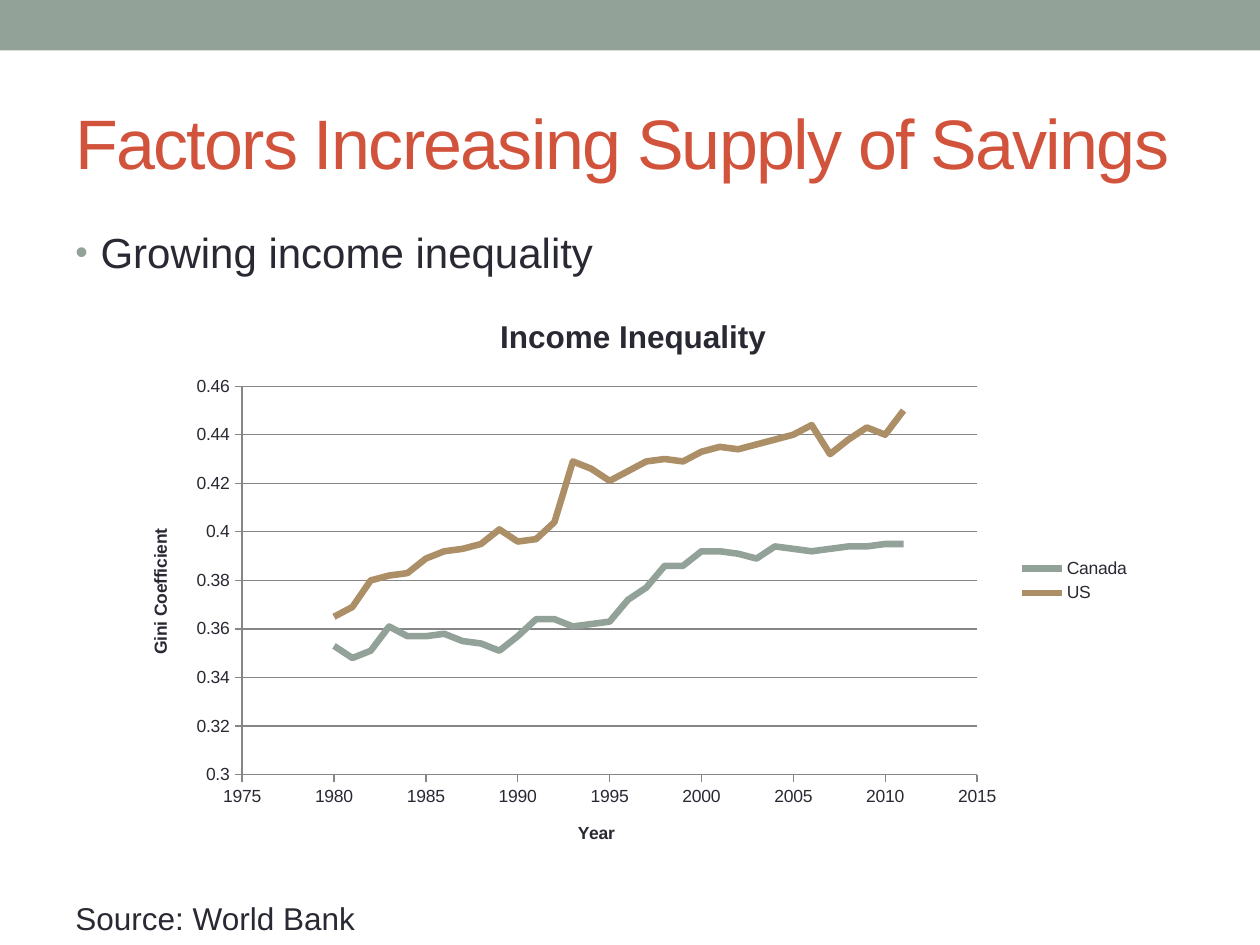
from lxml import etree
from pptx import Presentation
from pptx.chart import data as chart_data
from pptx.dml.color import RGBColor
from pptx.enum import chart as charts, shapes, text
from pptx.oxml import ns
from pptx.util import Pt

FONT = "Arial"
COLORS = {
    "sage": "93A299",
    "tan": "AD8F67",
    "title": "D2533C",
    "ink": "292934",
    "grid": "868686",
}
YEARS = range(1980, 2012)
GINI = {
    "Canada": ("sage", [
        0.353, 0.348, 0.351, 0.361, 0.357, 0.357, 0.358, 0.355,
        0.354, 0.351, 0.357, 0.364, 0.364, 0.361, 0.362, 0.363,
        0.372, 0.377, 0.386, 0.386, 0.392, 0.392, 0.391, 0.389,
        0.394, 0.393, 0.392, 0.393, 0.394, 0.394, 0.395, 0.395]),
    "US": ("tan", [
        0.365, 0.369, 0.38, 0.382, 0.383, 0.389, 0.392, 0.393,
        0.395, 0.401, 0.396, 0.397, 0.404, 0.429, 0.426, 0.421,
        0.425, 0.429, 0.43, 0.429, 0.433, 0.435, 0.434, 0.436,
        0.438, 0.44, 0.444, 0.432, 0.438, 0.443, 0.44, 0.45]),
}


def rgb(name):
    return RGBColor.from_string(COLORS[name])


def style_font(font, size, color="ink", bold=False):
    font.name = FONT
    font.size = Pt(size)
    font.bold = bold
    font.color.rgb = rgb(color)


def add_band(slide, width, height):
    band = slide.shapes.add_shape(shapes.MSO_SHAPE.RECTANGLE, 0, 0, Pt(width), Pt(height))
    band.shadow.inherit = False
    band.fill.solid()
    band.fill.fore_color.rgb = rgb("sage")
    band.line.fill.background()


def add_text(slide, box, wording, size, color="ink", anchor=text.MSO_ANCHOR.TOP):
    """Add a one-run text box and return its paragraph and run."""
    frame = slide.shapes.add_textbox(*map(Pt, box)).text_frame
    frame.word_wrap = True
    frame.vertical_anchor = anchor
    paragraph = frame.paragraphs[0]
    run = paragraph.add_run()
    run.text = wording
    style_font(run.font, size, color)
    return paragraph, run


def add_bullet(paragraph, indent):
    properties = paragraph._p.get_or_add_pPr()
    properties.set("marL", str(Pt(indent)))
    properties.set("indent", str(-Pt(indent)))
    color = etree.SubElement(properties, ns.qn("a:buClr"))
    etree.SubElement(color, ns.qn("a:srgbClr"), val=COLORS["sage"])
    etree.SubElement(properties, ns.qn("a:buSzPct"), val="85000")
    etree.SubElement(properties, ns.qn("a:buFont"), typeface=FONT)
    etree.SubElement(properties, ns.qn("a:buChar"), char="•")


def set_heading(owner, wording, size):
    """Give a chart or an axis a bold title."""
    run = owner.text_frame.paragraphs[0].add_run()
    run.text = wording
    style_font(run.font, size, bold=True)


def style_axis(axis, wording, gridlines):
    axis.has_major_gridlines = gridlines
    axis.major_tick_mark = charts.XL_TICK_MARK.OUTSIDE
    axis.minor_tick_mark = charts.XL_TICK_MARK.NONE
    axis.tick_labels.number_format = "General"
    axis.tick_labels.number_format_is_linked = False
    style_font(axis.tick_labels.font, 10)
    lines = [axis.format.line]
    if gridlines:
        lines.append(axis.major_gridlines.format.line)
    for line in lines:
        line.color.rgb = rgb("grid")
        line.width = Pt(0.75)
    set_heading(axis.axis_title, wording, 10)


def add_inequality_chart(slide, box):
    data = chart_data.XyChartData()
    for country, (_, values) in GINI.items():
        series = data.add_series(country)
        for year, value in zip(YEARS, values):
            series.add_data_point(year, value)
    kind = charts.XL_CHART_TYPE.XY_SCATTER_SMOOTH_NO_MARKERS
    chart = slide.shapes.add_chart(kind, *map(Pt, box), data).chart
    style_font(chart.font, 10)
    chart.has_title = True
    set_heading(chart.chart_title, "Income Inequality", 18)
    chart.chart_title.include_in_layout = False
    chart.has_legend = True
    chart.legend.position = charts.XL_LEGEND_POSITION.RIGHT
    chart.legend.include_in_layout = False
    style_font(chart.legend.font, 10)
    style_axis(chart.category_axis, "Year", False)
    style_axis(chart.value_axis, "Gini Coefficient", True)
    chart.value_axis.minimum_scale = 0.3

    plot = chart.plots[0]
    plot.vary_by_categories = False
    for series, (color, _) in zip(plot.series, GINI.values()):
        series.smooth = True
        series.marker.style = charts.XL_MARKER_STYLE.NONE
        series.format.line.color.rgb = rgb(color)
        series.format.line.width = Pt(3.75)


def main():
    deck = Presentation()
    deck.slide_width, deck.slide_height = Pt(720), Pt(540)
    slide = deck.slides.add_slide(deck.slide_layouts[6])

    add_band(slide, 720, 28.8)
    _, title = add_text(slide, (36, 42, 648, 78), "Factors Increasing Supply of Savings",
                        40, "title", text.MSO_ANCHOR.MIDDLE)
    title.font._element.set("spc", "-100")
    point, _ = add_text(slide, (36, 126, 648, 384), "Growing income inequality", 24)
    point.space_before = Pt(4.8)
    add_bullet(point, 14.4)
    add_inequality_chart(slide, (70.6, 167, 582.5, 329.8))
    add_text(slide, (36, 510, 222.5, 29), "Source: World Bank", 18)

    deck.save("out.pptx")


if __name__ == "__main__":
    main()
